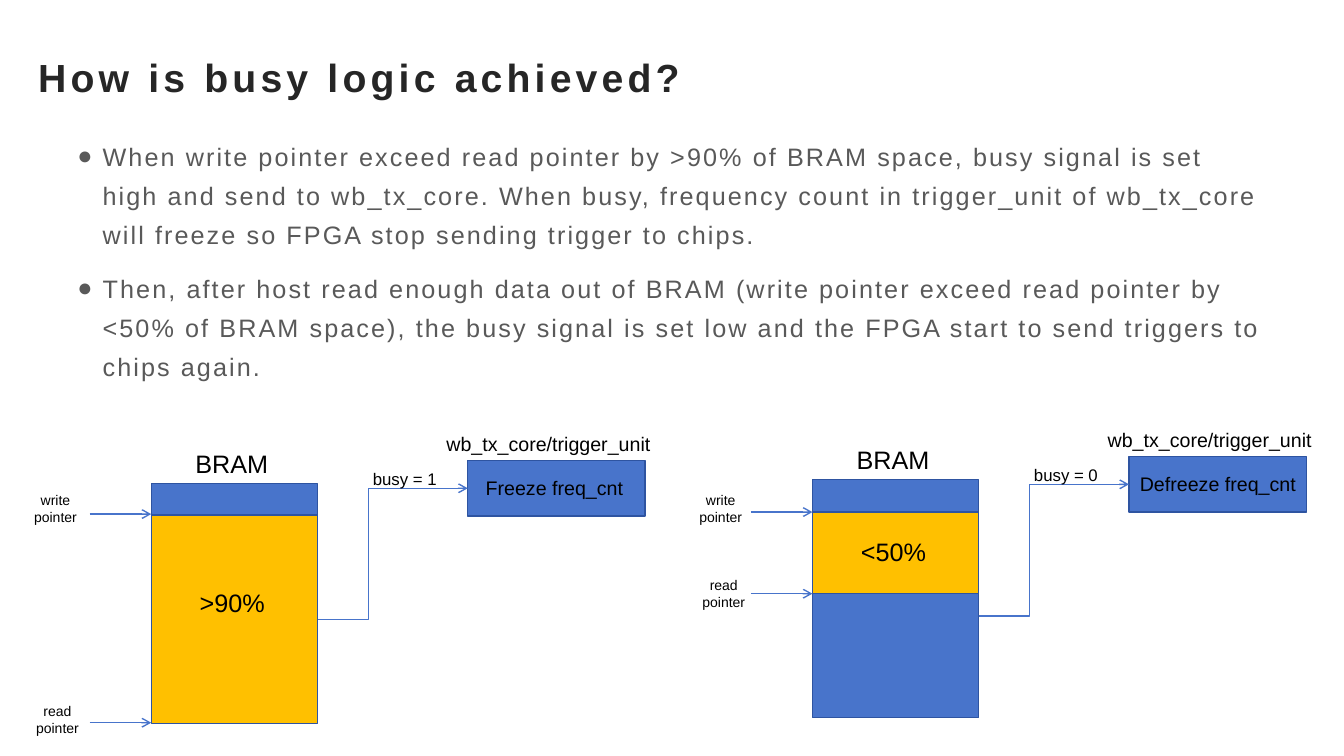
from dataclasses import dataclass

from lxml.etree import SubElement
from pptx import Presentation
from pptx.dml.color import RGBColor
from pptx.enum.shapes import MSO_CONNECTOR as Link, MSO_SHAPE as Preset
from pptx.enum.text import MSO_ANCHOR as Anchor, MSO_AUTO_SIZE as Fit, PP_ALIGN as Align
from pptx.oxml.ns import qn
from pptx.util import Pt

# Content
HEADING = "How is busy logic achieved?"
POINTS = [
    "When write pointer exceed read pointer by >90% of BRAM space, busy signal is set "
    "high and send to wb_tx_core. When busy, frequency count in trigger_unit of "
    "wb_tx_core will freeze so FPGA stop sending trigger to chips.",
    "Then, after host read enough data out of BRAM (write pointer exceed read pointer by "
    "<50% of BRAM space), the busy signal is set low and the FPGA start to send triggers "
    "to chips again.",
]
# Each diagram is placed by the top left corner of its BRAM block.
# Pointers: name, label offset x and y, arrow offset y.
DIAGRAMS = [
    dict(corner=(150, 480), level=">90%", used=(31, 207), level_y=98,
         busy="busy = 1", action="Freeze freq_cnt", action_x=322,
         pointers=[("write pointer", -129, 3, 30), ("read pointer", -127, 212, 237)]),
    dict(corner=(806, 476), level="<50%", used=(32, 81), level_y=51,
         busy="busy = 0", action="Defreeze freq_cnt", action_x=315,
         pointers=[("write pointer", -125, 7, 32), ("read pointer", -122, 91, 113)]),
]

# Layout, 100 px to the inch
PX = 9144
BRAM_W, BRAM_H = 165, 236
CORE_X, CORE_Y, CORE_W, CORE_H = 314, -23, 176, 55
ARROW_W = 61
SIGNAL_Y = 135
SIGNAL_BEND = 33900


@dataclass(frozen=True)
class Theme:
    font: str = "Arial"
    heading: str = "262626"
    body: str = "595959"
    label: str = "000000"
    block: str = "4874CB"
    used: str = "FFC000"
    edge: str = "2E54A1"
    heading_pt: int = 28
    large_pt: int = 18
    medium_pt: int = 14
    small_pt: int = 12
    tiny_pt: int = 10


theme = Theme()
deck = Presentation()
deck.slide_width, deck.slide_height = 12192000, 750 * PX
slide = deck.slides.add_slide(deck.slide_layouts[6])


def emu(*lengths):
    return [length * PX for length in lengths]


def rgb(code):
    return RGBColor.from_string(code)


def add_text(x, y, w, h, fit=Fit.NONE):
    frame = slide.shapes.add_textbox(*emu(x, y, w, h)).text_frame
    frame.word_wrap = True
    frame.auto_size = fit
    return frame


def add_run(paragraph, words, size, color, spacing=0, bold=False):
    run = paragraph.add_run()
    run.text = words
    run.font.name, run.font.size, run.font.bold = theme.font, Pt(size), bold
    run.font.color.rgb = rgb(color)
    if spacing:
        run._r.get_or_add_rPr().set("spc", str(spacing))


def add_label(x, y, w, h, words, size, align=Align.CENTER):
    paragraph = add_text(x, y, w, h, Fit.SHAPE_TO_FIT_TEXT).paragraphs[0]
    paragraph.alignment = align
    add_run(paragraph, words, size, theme.label)


def add_block(x, y, w, h, fill):
    block = slide.shapes.add_shape(Preset.RECTANGLE, *emu(x, y, w, h))
    block.shadow.inherit = False
    block.fill.solid()
    block.fill.fore_color.rgb = rgb(fill)
    block.line.color.rgb = rgb(theme.edge)
    block.line.width = Pt(1)
    return block


def add_arrow(kind, x1, y1, x2, y2):
    arrow = slide.shapes.add_connector(kind, *emu(x1, y1, x2, y2))
    arrow.line.color.rgb = rgb(theme.block)
    arrow.line.width = Pt(1)
    SubElement(arrow.line._get_or_add_ln(), qn("a:tailEnd"), type="arrow")
    SubElement(arrow._element.spPr, qn("a:effectLst"))
    return arrow


def add_diagram(corner, level, used, level_y, busy, action, action_x, pointers):
    x, y = corner
    used_y, used_h = used

    # Memory block, its used part and the trigger unit
    add_block(x, y, BRAM_W, BRAM_H, theme.block)
    used_part = add_block(x, y + used_y, BRAM_W, used_h, theme.used)
    core = add_block(x + CORE_X, y + CORE_Y, CORE_W, CORE_H, theme.block)

    # Busy signal
    signal = add_arrow(Link.ELBOW, x + BRAM_W, y + SIGNAL_Y,
                       x + CORE_X, y + CORE_Y + CORE_H // 2)
    if abs(used_y + used_h / 2 - SIGNAL_Y) < 1:
        signal.begin_connect(used_part, 3)
    signal.end_connect(core, 1)
    bend = signal._element.spPr.find(qn("a:prstGeom")).find(qn("a:avLst"))
    SubElement(bend, qn("a:gd"), name="adj1", fmla=f"val {SIGNAL_BEND}")

    # Labels
    add_label(x + action_x, y - 13, 184, 34, action, theme.medium_pt, Align.LEFT)
    add_label(x + 283, y - 56, 225, 34, "wb_tx_core/trigger_unit",
              theme.medium_pt, Align.LEFT)
    add_label(x + 210, y - 20, 93, 30, busy, theme.small_pt, Align.LEFT)
    add_label(x + 32, y + level_y, 97, 40, level, theme.large_pt)
    add_label(x + 21, y - 40, 118, 40, "BRAM", theme.large_pt)

    # Pointers
    for name, label_x, label_y, arrow_y in pointers:
        add_arrow(Link.STRAIGHT, x - ARROW_W, y + arrow_y, x, y + arrow_y)
        add_label(x + label_x, y + label_y, 68, 44, name, theme.tiny_pt)


# Heading
heading = add_text(28, 38, 1200, 77)
heading.vertical_anchor = Anchor.MIDDLE
add_run(heading.paragraphs[0], HEADING, theme.heading_pt, theme.heading, 300, True)

# Bulleted points
body = add_text(67, 126, 1200, 264)
for number, point in enumerate(POINTS):
    paragraph = body.add_paragraph() if number else body.paragraphs[0]
    paragraph.line_spacing = 1.3
    paragraph.space_after = Pt(10)
    props = paragraph._p.get_or_add_pPr()
    props.set("marL", str(25 * PX))
    props.set("indent", str(-25 * PX))
    SubElement(props, qn("a:buFont"), typeface=theme.font)
    SubElement(props, qn("a:buChar"), char="●")
    add_run(paragraph, point, theme.large_pt, theme.body, 150)

# Diagrams
for diagram in DIAGRAMS:
    add_diagram(**diagram)

deck.save("out.pptx")
